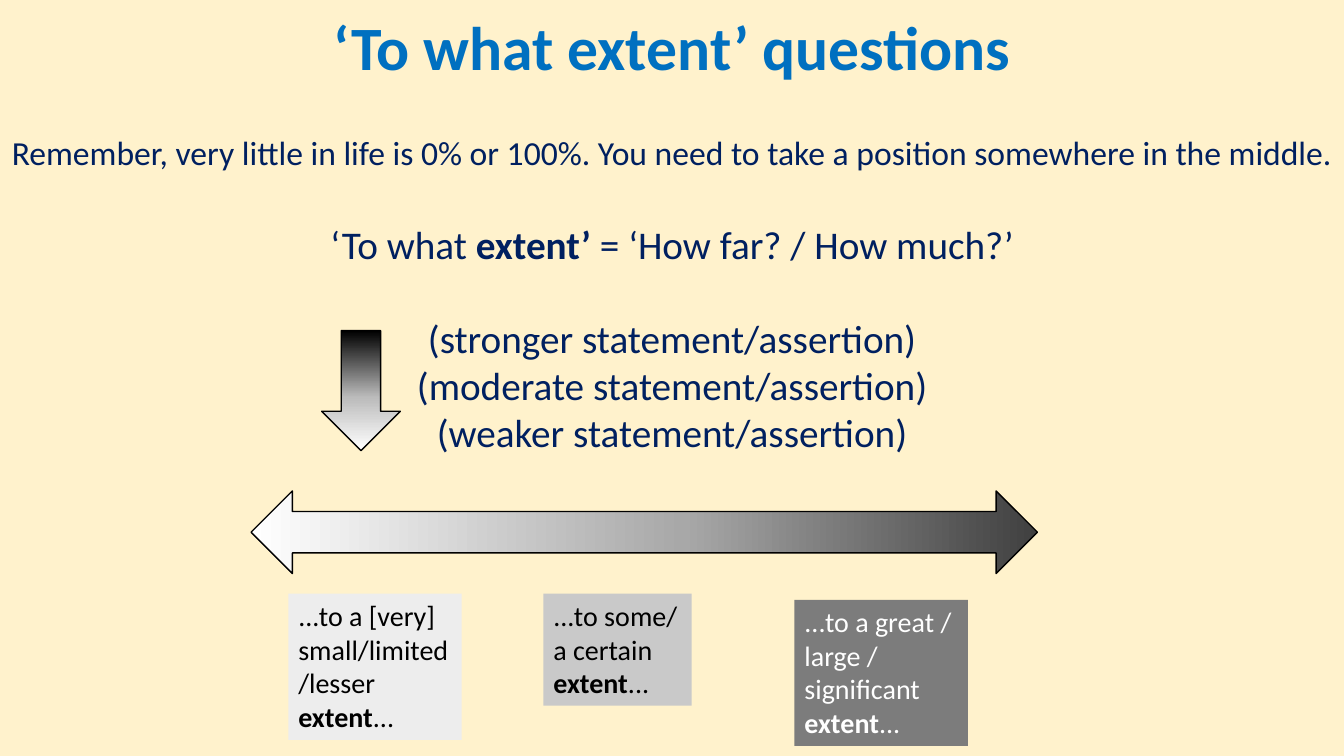
from lxml.etree import SubElement
from pptx import Presentation
from pptx.dml.color import RGBColor
from pptx.enum.shapes import MSO_SHAPE as Preset
from pptx.enum.text import MSO_ANCHOR as Anchor, MSO_AUTO_SIZE as AutoSize, PP_ALIGN as Align
from pptx.oxml.ns import qn
from pptx.util import Inches, Pt

CREAM = RGBColor(0xFF, 0xF2, 0xCC)
BLUE = RGBColor(0x00, 0x70, 0xC0)
NAVY = RGBColor(0x00, 0x20, 0x60)
BLACK = RGBColor(0x00, 0x00, 0x00)
WHITE = RGBColor(0xFF, 0xFF, 0xFF)
CHARCOAL = RGBColor(0x40, 0x40, 0x40)
MID_GREY = RGBColor(0xA8, 0xA8, 0xA8)
SILVER = RGBColor(0xBC, 0xBC, 0xBC)
GREAT_GREY = RGBColor(0x7C, 0x7C, 0x7C)
SOME_GREY = RGBColor(0xC9, 0xC9, 0xC9)
SMALL_GREY = RGBColor(0xED, 0xED, 0xED)

SLIDE_W, SLIDE_H = Inches(13.33), Inches(7.5)

HEADING = "‘To what extent’ questions"
ADVICE = [
    (24, 0, [("Remember, very little in life is 0% or 100%. "
              "You need to take a position somewhere in the middle.", False)]),
    (28, 34, [("‘To what", False), (" extent’", True), (" = ‘How far? / How much?’", False)]),
    (28, 34, [("(stronger statement/assertion)", False)]),
    (28, 0, [("(moderate statement/assertion)", False)]),
    (28, 0, [("(weaker statement/assertion)", False)]),
]
ARROWS = [
    (Preset.DOWN_ARROW, (3.19, 3.28, 0.78, 1.19), 270,
     [(0, BLACK), (56, SILVER), (100, WHITE)]),
    (Preset.LEFT_RIGHT_ARROW, (2.49, 4.87, 7.8, 0.82), 180,
     [(0, CHARCOAL), (45, MID_GREY), (100, WHITE)]),
]
DEGREES = [
    ("...to a great / large / significant ", (7.88, 5.95, 1.72, 1.45), GREAT_GREY, WHITE),
    ("...to some/ a certain ", (5.39, 5.89, 1.47, 1.11), SOME_GREY, BLACK),
    ("...to a [very] small/limited/lesser ", (2.86, 5.89, 1.72, 1.45), SMALL_GREY, BLACK),
]


def place(box):
    return [Inches(length) for length in box]


def apply(target, formats):
    for attribute, value in formats.items():
        setattr(target, attribute, value)


def write(paragraph, pieces, size, colour):
    for words, bold in pieces:
        run = paragraph.add_run()
        run.text = words
        apply(run.font, {"name": "Calibri", "size": Pt(size), "bold": bold})
        run.font.color.rgb = colour


def shade(fill, shape, stops, angle):
    fill.gradient()
    fill.gradient_angle = angle
    stop_list = shape._element.spPr.find(qn("a:gradFill")).find(qn("a:gsLst"))
    for old_stop in list(stop_list):
        stop_list.remove(old_stop)
    for share, colour in stops:
        stop = SubElement(stop_list, qn("a:gs"), pos=str(share * 1000))
        SubElement(stop, qn("a:srgbClr"), val=str(colour))


def main():
    deck = Presentation()
    apply(deck, {"slide_width": SLIDE_W, "slide_height": SLIDE_H})
    slide = deck.slides.add_slide(deck.slide_layouts[5])
    slide.background.fill.solid()
    slide.background.fill.fore_color.rgb = CREAM

    advice = slide.shapes.add_textbox(0, Inches(1.25), SLIDE_W, Inches(3.33)).text_frame
    apply(advice, {"word_wrap": True, "vertical_anchor": Anchor.MIDDLE,
                   "auto_size": AutoSize.SHAPE_TO_FIT_TEXT})
    for number, (size, gap, pieces) in enumerate(ADVICE):
        line = advice.add_paragraph() if number else advice.paragraphs[0]
        apply(line, {"alignment": Align.CENTER, "space_before": Pt(gap)})
        write(line, pieces, size, NAVY)

    title = slide.shapes.title
    left, top, width, height = place((2.17, 0.1, 9, 0.8))
    apply(title, {"left": left, "top": top, "width": width, "height": height})
    apply(title.text_frame, {"vertical_anchor": Anchor.MIDDLE, "word_wrap": True})
    heading = title.text_frame.paragraphs[0]
    apply(heading, {"alignment": Align.CENTER, "line_spacing": 0.9})
    write(heading, [(HEADING, True)], 44, BLUE)

    for preset, box, angle, stops in ARROWS:
        arrow = slide.shapes.add_shape(preset, *place(box))
        arrow.shadow.inherit = False
        shade(arrow.fill, arrow, stops, angle)
        arrow.line.color.rgb = BLACK
        arrow.line.width = Pt(1)

    for words, box, grey, ink in DEGREES:
        degree = slide.shapes.add_shape(Preset.RECTANGLE, *place(box))
        degree.shadow.inherit = False
        degree.fill.solid()
        degree.fill.fore_color.rgb = grey
        degree.line.fill.background()
        apply(degree.text_frame, {"word_wrap": True, "vertical_anchor": Anchor.TOP,
                                  "auto_size": AutoSize.SHAPE_TO_FIT_TEXT})
        phrase = degree.text_frame.paragraphs[0]
        phrase.alignment = Align.LEFT
        write(phrase, [(words, False), ("extent", True), ("...", False)], 20, ink)

    deck.save("out.pptx")


if __name__ == "__main__":
    main()
